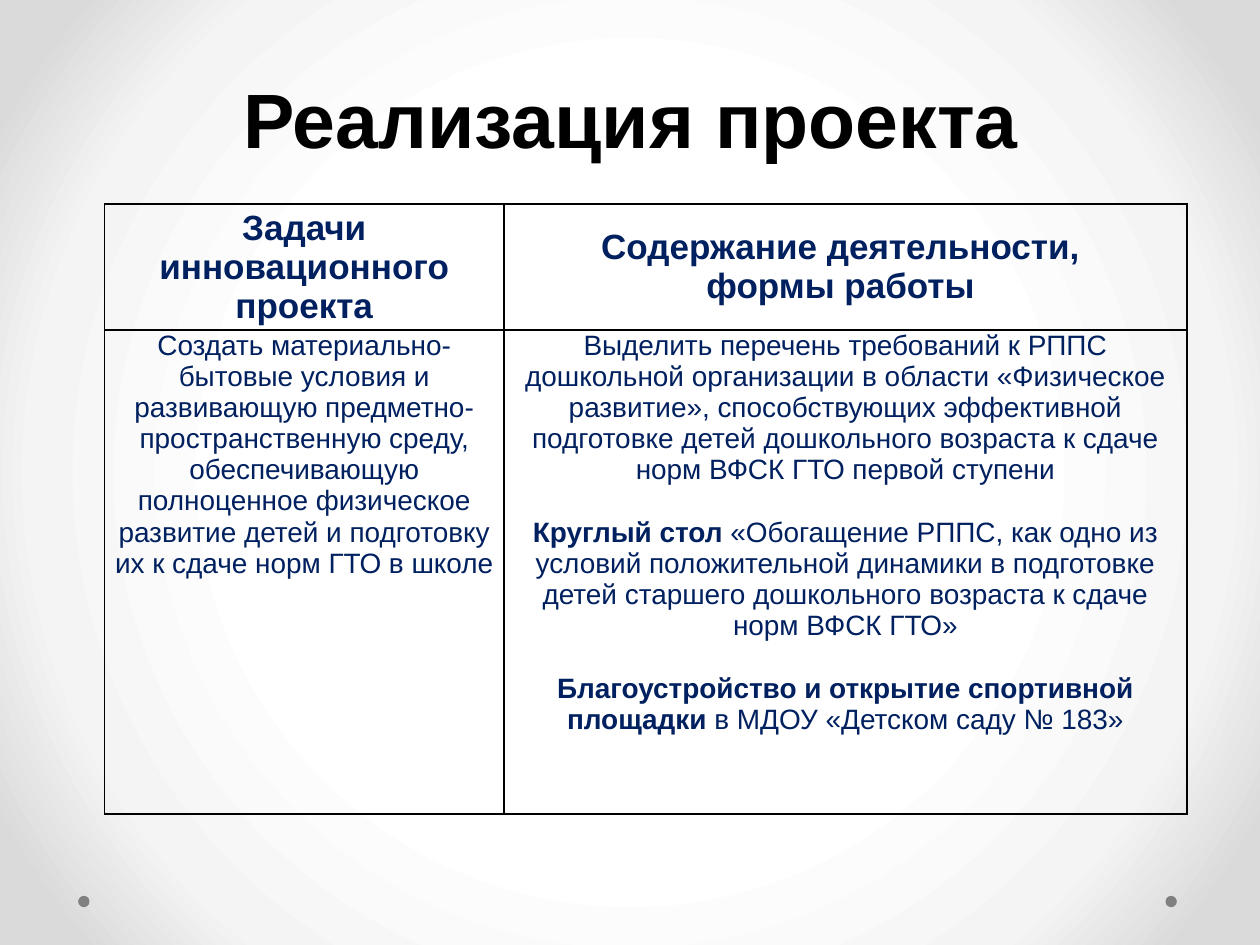
import pptx
import pptx.dml.color
import pptx.enum.shapes
import pptx.enum.text
import pptx.oxml
import pptx.oxml.ns
import pptx.util

WIDE, HIGH = 10, 7.5
FONT = "Arial"
NAVY, BLACK, GREY = "002060", "000000", "808080"
GLOW = [(50, "FFFFFF"), (76, "F4F4F4"), (92, "DADADA")]
COLS, ROWS = [3.17, 5.42], [0.96, 3.84]
Inches, Pt = pptx.util.Inches, pptx.util.Pt
ANCHOR = pptx.enum.text.MSO_ANCHOR

# Each cell is a list of paragraphs, each paragraph a list of (text, bold)
HEADS = [
    [[("Задачи инновационного проекта", True)]],
    [[("Содержание деятельности, ", True)], [("формы работы ", True)]],
]
BODY = [
    [[("Создать материально-бытовые условия и развивающую "
       "предметно-пространственную среду, обеспечивающую полноценное "
       "физическое развитие детей и подготовку их к сдаче норм ГТО в школе",
       False)]],
    [
        [("Выделить перечень требований к РППС дошкольной организации в "
          "области «Физическое развитие», способствующих эффективной "
          "подготовке детей дошкольного возраста к сдаче норм ВФСК ГТО "
          "первой ступени", False)],
        [("Круглый стол ", True),
         ("«Обогащение РППС, как одно из условий положительной динамики в "
          "подготовке детей старшего дошкольного возраста к сдаче норм "
          "ВФСК ГТО»", False)],
        [("Благоустройство и открытие спортивной площадки ", True),
         ("в МДОУ «Детском саду № 183»", False)],
    ],
]


def paint(color, code):
    color.rgb = pptx.dml.color.RGBColor.from_string(code)


def write(frame, paras, size=16, color=NAVY, gap=0, line=None):
    """Fill a text frame with centred paragraphs, spaced by gap points."""
    frame.word_wrap = True
    for i, runs in enumerate(paras):
        para = frame.paragraphs[0] if i == 0 else frame.add_paragraph()
        para.alignment = pptx.enum.text.PP_ALIGN.CENTER
        para.space_before = Pt(gap if i else 0)
        if line:
            para.line_spacing = Pt(line)
        for text, bold in runs:
            run = para.add_run()
            run.text = text
            run.font.name, run.font.size, run.font.bold = FONT, Pt(size), bold
            paint(run.font.color, color)


def shade(slide):
    """Give the slide a round gradient that spreads from its centre."""
    stops = "".join(
        f'<a:gs pos="{pos * 1000}"><a:srgbClr val="{code}"/></a:gs>'
        for pos, code in GLOW)
    slide.element.cSld.insert(0, pptx.oxml.parse_xml(
        f'<p:bg {pptx.oxml.ns.nsdecls("p", "a")}><p:bgPr>'
        f'<a:gradFill rotWithShape="1"><a:gsLst>{stops}</a:gsLst>'
        '<a:path path="circle">'
        '<a:fillToRect l="50000" t="50000" r="50000" b="50000"/></a:path>'
        '</a:gradFill><a:effectLst/></p:bgPr></p:bg>'))


def dot(slide, left):
    oval = slide.shapes.add_shape(
        pptx.enum.shapes.MSO_SHAPE.OVAL, Inches(left), Inches(7.11),
        Inches(0.09), Inches(0.09))
    oval.shadow.inherit = False
    oval.fill.solid()
    paint(oval.fill.fore_color, GREY)
    oval.line.fill.background()


def title(slide, text):
    box = slide.shapes.add_textbox(
        Inches(0.51), Inches(0.36), Inches(0.9 * WIDE), Inches(0.99))
    box.text_frame.vertical_anchor = ANCHOR.BOTTOM
    write(box.text_frame, [[(text, True)]], size=44, color=BLACK, line=58)


def edge(cell):
    """Draw a thin black border on all four sides of a cell."""
    props = cell._tc.get_or_add_tcPr()
    for i, side in enumerate("LRTB"):
        props.insert(i, pptx.oxml.parse_xml(
            f'<a:ln{side} {pptx.oxml.ns.nsdecls("a")} w="{Pt(1)}">'
            f'<a:solidFill><a:srgbClr val="{BLACK}"/></a:solidFill>'
            f'</a:ln{side}>'))


def fill(cell, paras, anchor, **form):
    cell.fill.background()
    edge(cell)
    cell.margin_left = cell.margin_right = Inches(0.02)
    cell.margin_top = cell.margin_bottom = 0
    cell.vertical_anchor = anchor
    write(cell.text_frame, paras, **form)


def grid(slide):
    table = slide.shapes.add_table(
        len(ROWS), len(COLS), Inches(0.83), Inches(1.62),
        Inches(sum(COLS)), Inches(sum(ROWS))).table
    for col, width in zip(table.columns, COLS):
        col.width = Inches(width)
    for row, height in zip(table.rows, ROWS):
        row.height = Inches(height)
    for i in range(len(COLS)):
        fill(table.cell(0, i), HEADS[i], ANCHOR.MIDDLE, size=20)
        fill(table.cell(1, i), BODY[i], ANCHOR.TOP, gap=18)


def main():
    deck = pptx.Presentation()
    deck.slide_width, deck.slide_height = Inches(WIDE), Inches(HIGH)
    slide = deck.slides.add_slide(deck.slide_layouts[6])
    # Backdrop
    shade(slide)
    for left in (9.25, 0.62):
        dot(slide, left)
    # Content
    title(slide, "Реализация проекта")
    grid(slide)
    deck.save("out.pptx")


if __name__ == "__main__":
    main()
